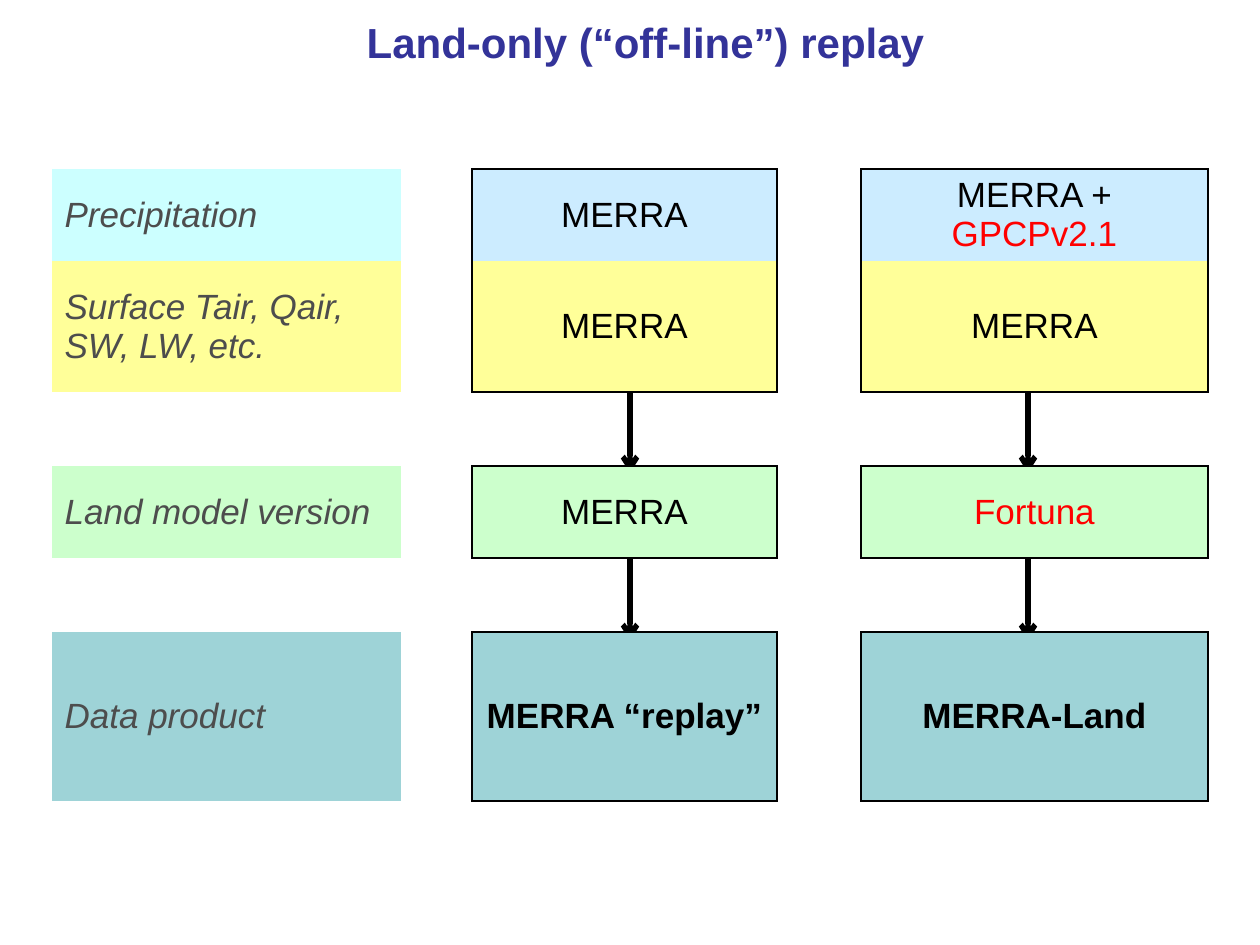
from dataclasses import dataclass

from lxml import etree
from pptx import Presentation
from pptx import util as u
from pptx.dml.color import RGBColor
from pptx.enum import shapes, text
from pptx.oxml import ns

EMU_PER_PX = 914400 / 126
NO_TABLE_STYLE = "{2D5ABB26-0587-4C30-8999-92F81FD0307C}"


@dataclass(frozen=True)
class Theme:
    font: str = "Arial"
    title_size: int = 24
    cell_size: int = 20
    border_width: int = 1
    arrow_width: int = 3
    title: str = "333399"
    label: str = "4D4D4D"
    ink: str = "000000"
    changed: str = "FF0000"
    rain_label: str = "CCFFFF"
    rain: str = "CCECFF"
    forcing: str = "FFFF99"
    model: str = "CCFFCC"
    product: str = "9ED3D7"


THEME = Theme()


@dataclass(frozen=True)
class Span:
    words: str
    color: str = THEME.ink
    bold: bool = False
    italic: bool = False


@dataclass(frozen=True)
class Entry:
    row: int
    column: int
    fill: str
    spans: tuple[Span, ...]
    edges: str = ""


@dataclass(frozen=True)
class Arrow:
    x: int
    top: int
    bottom: int


COLUMNS = (349, 71, 305, 84, 347)
ROWS = (92, 131, 74, 92, 74, 169)
TABLE_LEFT, TABLE_TOP = 52, 169


def label(words: str) -> tuple[Span, ...]:
    return (Span(words, THEME.label, italic=True),)


MERRA = (Span("MERRA"),)
ENTRIES = (
    Entry(0, 0, THEME.rain_label, label("Precipitation")),
    Entry(0, 2, THEME.rain, MERRA, "LRT"),
    Entry(0, 4, THEME.rain, (Span("MERRA + "), Span("GPCPv2.1", THEME.changed)), "LRT"),
    Entry(1, 0, THEME.forcing, label("Surface Tair, Qair, SW, LW, etc.")),
    Entry(1, 2, THEME.forcing, MERRA, "LRB"),
    Entry(1, 4, THEME.forcing, MERRA, "LRB"),
    Entry(3, 0, THEME.model, label("Land model version")),
    Entry(3, 2, THEME.model, MERRA, "LRTB"),
    Entry(3, 4, THEME.model, (Span("Fortuna", THEME.changed),), "LRTB"),
    Entry(5, 0, THEME.product, label("Data product")),
    Entry(5, 2, THEME.product, (Span("MERRA “replay”", bold=True),), "LRTB"),
    Entry(5, 4, THEME.product, (Span("MERRA-Land", bold=True),), "LRTB"),
)
ARROWS = [Arrow(x, top, top + 84) for x in (630, 1028) for top in (389, 557)]


def px(length: int) -> u.Emu:
    return u.Emu(round(length * EMU_PER_PX))


def write(para, spans: tuple[Span, ...], size: int) -> None:
    for span in spans:
        run = para.add_run()
        run.text = span.words
        formats = {"name": THEME.font, "size": u.Pt(size),
                   "bold": span.bold, "italic": span.italic}
        for name, value in formats.items():
            setattr(run.font, name, value)
        run.font.color.rgb = RGBColor.from_string(span.color)


def draw_arrow(page, arrow: Arrow) -> None:
    line = page.shapes.add_connector(
        shapes.MSO_CONNECTOR.STRAIGHT,
        px(arrow.x), px(arrow.top), px(arrow.x), px(arrow.bottom))
    line.line.width = u.Pt(THEME.arrow_width)
    line.line.color.rgb = RGBColor.from_string(THEME.ink)
    etree.SubElement(line.line._get_or_add_ln(), ns.qn("a:tailEnd"), type="arrow")
    etree.SubElement(line._element.spPr, ns.qn("a:effectLst"))


def add_borders(cell, edges: str) -> None:
    """Borders must precede the fill in the cell properties."""
    properties = cell._tc.get_or_add_tcPr()
    for edge in edges:
        border = etree.SubElement(properties, ns.qn(f"a:ln{edge}"),
                                  w=str(u.Pt(THEME.border_width)))
        solid = etree.SubElement(border, ns.qn("a:solidFill"))
        etree.SubElement(solid, ns.qn("a:srgbClr"), val=THEME.ink)


def fill_cell(table, entry: Entry) -> None:
    cell = table.cell(entry.row, entry.column)
    add_borders(cell, entry.edges)
    cell.fill.solid()
    cell.fill.fore_color.rgb = RGBColor.from_string(entry.fill)
    cell.vertical_anchor = text.MSO_ANCHOR.MIDDLE
    para = cell.text_frame.paragraphs[0]
    para.alignment = text.PP_ALIGN.CENTER if entry.column else text.PP_ALIGN.LEFT
    write(para, entry.spans, THEME.cell_size)


def draw_table(page) -> None:
    frame = page.shapes.add_table(
        len(ROWS), len(COLUMNS), px(TABLE_LEFT), px(TABLE_TOP),
        px(sum(COLUMNS)), px(sum(ROWS)))
    table = frame.table
    table.first_row = table.horz_banding = False
    table._tbl.tblPr.find(ns.qn("a:tableStyleId")).text = NO_TABLE_STYLE
    for column, width in zip(table.columns, COLUMNS):
        column.width = px(width)
    for row, height in zip(table.rows, ROWS):
        row.height = px(height)
    filled = {(entry.row, entry.column) for entry in ENTRIES}
    for row in range(len(ROWS)):
        for column in range(len(COLUMNS)):
            if (row, column) not in filled:
                table.cell(row, column).fill.background()
    for entry in ENTRIES:
        fill_cell(table, entry)


def draw_title(page) -> None:
    box = page.shapes.add_textbox(px(31), px(10), px(1229), px(63))
    box.text_frame.word_wrap = True
    para = box.text_frame.paragraphs[0]
    para.alignment = text.PP_ALIGN.CENTER
    title = Span("Land-only (“off-line”) replay", THEME.title, bold=True)
    write(para, (title,), THEME.title_size)


def main() -> None:
    deck = Presentation()
    deck.slide_width, deck.slide_height = px(1260), px(945)
    page = deck.slides.add_slide(deck.slide_layouts[6])
    for arrow in ARROWS:
        draw_arrow(page, arrow)
    draw_table(page)
    draw_title(page)
    deck.save("out.pptx")


if __name__ == "__main__":
    main()
